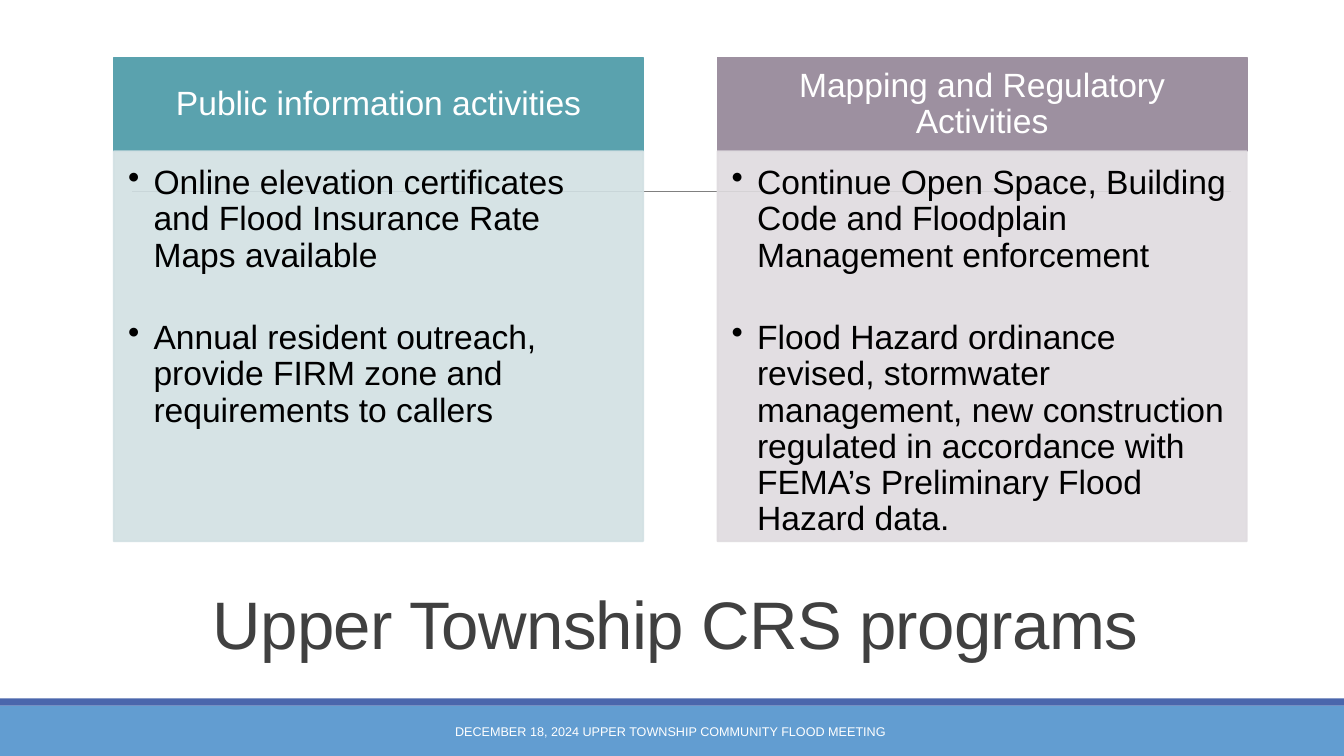
"""Builds the slide on Upper Township CRS programs."""
from pptx import Presentation
from pptx import util as u
from pptx.dml.color import RGBColor
from pptx.enum import shapes, text
from pptx.oxml.ns import qn
from lxml import etree

WHITE = RGBColor(0xFF, 0xFF, 0xFF)
BLACK = RGBColor(0, 0, 0)
TITLE_GREY = RGBColor(0x40, 0x40, 0x40)
RULE_GREY = RGBColor(0x80, 0x80, 0x80)
BAND_BLUE = RGBColor(0x62, 0x9D, 0xD1)
STRIPE_BLUE = RGBColor(0x4A, 0x66, 0xAC)
TEAL = RGBColor(0x5A, 0xA2, 0xAE)
PALE_TEAL = RGBColor(0xD2, 0xE0, 0xE3)
MAUVE = RGBColor(0x9D, 0x90, 0xA0)
PALE_MAUVE = RGBColor(0xDF, 0xDB, 0xDF)

COLUMNS = [
    ("Public information activities", TEAL, PALE_TEAL,
     ["Online elevation certificates and Flood Insurance Rate Maps available",
      "Annual resident outreach, provide FIRM zone and requirements to callers"]),
    ("Mapping and Regulatory Activities", MAUVE, PALE_MAUVE,
     ["Continue Open Space, Building Code and Floodplain Management enforcement",
      "Flood Hazard ordinance revised, stormwater management, new construction "
      "regulated in accordance with FEMA’s Preliminary Flood Hazard data."]),
]


def add_rect(s, box, color, outlined=False, alpha=None):
    """Add a flat rectangle, optionally outlined and translucent."""
    sp = s.shapes.add_shape(shapes.MSO_SHAPE.RECTANGLE, *map(u.Cm, box))
    sp.shadow.inherit = False
    sp.fill.solid()
    sp.fill.fore_color.rgb = color
    if outlined:
        sp.line.color.rgb = color
        sp.line.width = u.Pt(1.25)
    else:
        sp.line.fill.background()
    if alpha:
        for clr in sp._element.spPr.iter(qn("a:srgbClr")):
            etree.SubElement(clr, qn("a:alpha")).set("val", str(alpha * 1000))
    return sp


def set_frame(tf, anchor, margins):
    """Set wrapping, anchor and the left, top, right and bottom margins."""
    tf.word_wrap = True
    tf.vertical_anchor = anchor
    (tf.margin_left, tf.margin_top,
     tf.margin_right, tf.margin_bottom) = map(u.Cm, margins)


def style(p, size, color, align, spacing=1.0):
    """Set the font, alignment and line spacing of a paragraph."""
    p.font.name = "Arial"
    p.font.size = u.Pt(size)
    p.font.color.rgb = color
    p.alignment = align
    p.line_spacing = spacing


def add_bullet(p):
    """Give a paragraph a hanging round bullet."""
    pPr = p._p.get_or_add_pPr()
    pPr.set("marL", str(u.Cm(0.64)))
    pPr.set("indent", str(-u.Cm(0.64)))
    bu = etree.Element(qn("a:buChar"))
    bu.set("char", "•")
    pPr.find(qn("a:defRPr")).addprevious(bu)


def add_column(s, box, heading, color, pale, items):
    """Add a heading bar with a bulleted panel beneath it."""
    x, y, w, h = box
    bar = 2.36
    tf = add_rect(s, (x, y, w, bar), color, outlined=True).text_frame
    set_frame(tf, text.MSO_ANCHOR.MIDDLE, (0.48, 0.28, 0.48, 0.28))
    tf.text = heading
    style(tf.paragraphs[0], 24, WHITE, text.PP_ALIGN.CENTER, 0.9)

    tf = add_rect(s, (x, y + bar, w, h - bar), pale, True, alpha=90).text_frame
    set_frame(tf, text.MSO_ANCHOR.TOP, (0.36, 0.36, 0.48, 0.53))
    tf.text = "\n".join(items)
    for p in tf.paragraphs:
        style(p, 24, BLACK, text.PP_ALIGN.LEFT, 0.9)
        add_bullet(p)
    tf.paragraphs[0].space_after = u.Pt(33)


def add_label(s, box, words, size, color, spacing=1.0):
    """Add a centred line of text and return its paragraph."""
    tf = s.shapes.add_textbox(*map(u.Cm, box)).text_frame
    set_frame(tf, text.MSO_ANCHOR.MIDDLE, (0.25, 0.13, 0.25, 0.13))
    tf.text = words
    p = tf.paragraphs[0]
    style(p, size, color, text.PP_ALIGN.CENTER, spacing)
    return p


def add_rule(s, x1, x2, y):
    """Add the thin horizontal rule behind the columns."""
    ln = s.shapes.add_connector(shapes.MSO_CONNECTOR.STRAIGHT,
                                u.Cm(x1), u.Cm(y), u.Cm(x2), u.Cm(y))
    ln.line.color.rgb = RULE_GREY
    ln.line.width = u.Pt(0.5)
    etree.SubElement(ln._element.spPr, qn("a:effectLst"))


def add_footer(s, box):
    """Add the footer band, its top stripe and its caption."""
    x, y, w, h = box
    stripe = 0.18
    add_rect(s, (x, y + stripe, w, h - stripe), BAND_BLUE)
    add_rect(s, (x, y, w, stripe), STRIPE_BLUE)
    add_label(s, (x + 10.24, y + 0.33, 13.39, 1.02),
              "DECEMBER 18, 2024 UPPER TOWNSHIP COMMUNITY FLOOD MEETING ", 9, WHITE)


def main():
    """Build and save the slide."""
    prs = Presentation()
    prs.slide_width, prs.slide_height = u.Cm(33.87), u.Cm(19.05)
    s = prs.slides.add_slide(prs.slide_layouts[6])
    add_footer(s, (0, 17.6, 33.87, 1.45))
    add_rule(s, 3.33, 31.01, 4.83)
    title = add_label(s, (3.05, 14.2, 27.94, 3.3),
                      "Upper Township CRS programs", 48, TITLE_GREY, 0.85)
    title.runs[0]._r.get_or_add_rPr().set("spc", "-50")
    for i, column in enumerate(COLUMNS):
        add_column(s, (2.87 + i * 15.21, 1.45, 13.34, 12.19), *column)
    prs.save("out.pptx")


if __name__ == "__main__":
    main()
